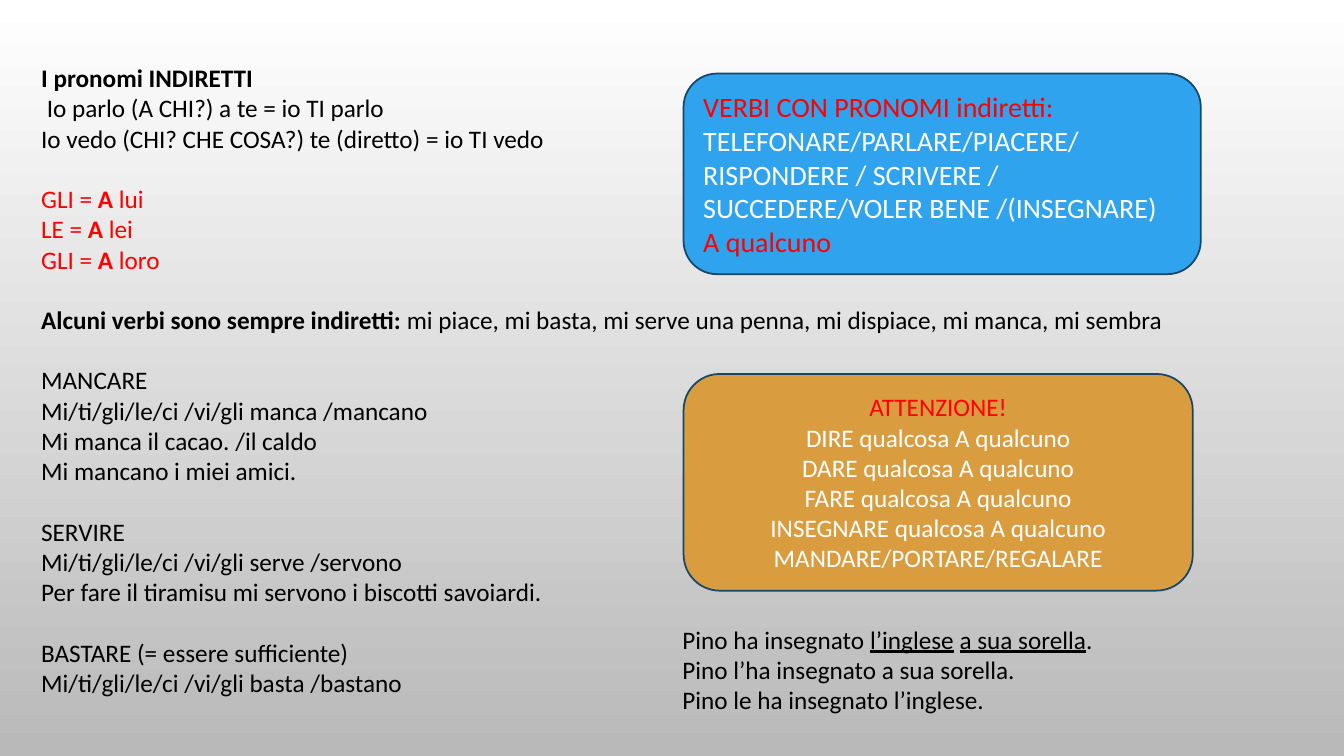
from pptx import Presentation
from pptx import util as u
from pptx.dml.color import RGBColor
from pptx.enum import shapes, text

BLACK = RGBColor(0x00, 0x00, 0x00)
WHITE = RGBColor(0xFF, 0xFF, 0xFF)
GREY = RGBColor(0xB9, 0xB9, 0xB9)
RED = RGBColor(0xFF, 0x00, 0x00)
BLUE = RGBColor(0x2F, 0xA3, 0xEE)
OCHRE = RGBColor(0xD9, 0x9C, 0x3F)
NAVY = RGBColor(0x15, 0x47, 0x68)

WIDTH, HEIGHT = 13.33, 7.5
RIGHT_COLUMN = 6.78
SECTION_GAP = 21.6

INDIRECT = [("GLI", "lui"), ("LE", "lei"), ("GLI", "loro")]
SECTIONS = [
    [
        [("I pronomi INDIRETTI", {"bold": True})],
        [(" Io parlo (A CHI?) a te = io TI parlo", {})],
        [("Io vedo (CHI? CHE COSA?) te (diretto) = io TI vedo", {})],
    ],
    [
        [(f"{pronoun} = ", {"color": RED}), ("A", {"color": RED, "bold": True}),
         (f" {person}", {"color": RED})]
        for pronoun, person in INDIRECT
    ],
    [
        [("Alcuni verbi sono sempre indiretti:", {"bold": True}),
         (" mi piace, mi basta, mi serve una penna, mi dispiace, mi manca, mi sembra", {})],
    ],
    [
        [("MANCARE", {})],
        [("Mi/ti/gli/le/ci /vi/gli manca /mancano", {})],
        [("Mi manca il cacao. /il caldo", {})],
        [("Mi mancano i miei amici.", {})],
    ],
    [
        [("SERVIRE", {})],
        [("Mi/ti/gli/le/ci /vi/gli serve /servono", {})],
        [("Per fare il tiramisu mi servono i biscotti savoiardi.", {})],
    ],
    [
        [("BASTARE (= essere sufficiente)", {})],
        [("Mi/ti/gli/le/ci /vi/gli basta /bastano", {})],
    ],
]
VERBS = [[
    [("VERBI CON PRONOMI indiretti:", {"color": RED})],
    [("TELEFONARE/PARLARE/PIACERE/ RISPONDERE / SCRIVERE / "
      "SUCCEDERE/VOLER BENE /(INSEGNARE)", {})],
    [("A qualcuno", {"color": RED})],
]]
WARNING = [[
    [("ATTENZIONE!", {"color": RED})],
    *[[(f"{verb} qualcosa A qualcuno", {})] for verb in ("DIRE", "DARE", "FARE", "INSEGNARE")],
    [("MANDARE/PORTARE/REGALARE", {})],
]]
EXAMPLES = [[
    [("Pino ha insegnato ", {}), ("l’inglese", {"underline": True}), (" ", {}),
     ("a sua sorella", {"underline": True}), (".", {})],
    [("Pino l’ha insegnato a sua sorella.", {})],
    [("Pino le ha insegnato l’inglese.", {})],
]]

TEXT_BOXES = [
    (SECTIONS, (0.31, 0.57, 12, 6.77)),
    (EXAMPLES, (6.67, 6.14, 4.65, 1.01)),
]
CARDS = [
    (VERBS, (RIGHT_COLUMN, 0.73, 5.13, 1.99), BLUE, 20, text.PP_ALIGN.LEFT),
    (WARNING, (RIGHT_COLUMN, 3.71, 5.05, 2.15), OCHRE, 18, text.PP_ALIGN.CENTER),
]


def write(frame, sections, size=18, color=BLACK, align=text.PP_ALIGN.LEFT,
          anchor=text.MSO_ANCHOR.TOP):
    frame.word_wrap = True
    frame.vertical_anchor = anchor
    paragraph = None
    for section in sections:
        for index, runs in enumerate(section):
            starts_section = index == 0 and paragraph is not None
            paragraph = frame.paragraphs[0] if paragraph is None else frame.add_paragraph()
            paragraph.alignment = align
            if starts_section:
                paragraph.space_before = u.Pt(SECTION_GAP)
            for content, style in runs:
                run = paragraph.add_run()
                run.text = content
                run.font.name = "Calibri"
                run.font.size = u.Pt(size)
                run.font.bold = style.get("bold", False)
                run.font.underline = style.get("underline", False)
                run.font.color.rgb = style.get("color", color)


def main():
    presentation = Presentation()
    presentation.slide_width = u.Inches(WIDTH)
    presentation.slide_height = u.Inches(HEIGHT)
    slide = presentation.slides.add_slide(presentation.slide_layouts[6])

    background = slide.background.fill
    background.gradient()
    background.gradient_angle = 270
    for stop, color in zip(background.gradient_stops, (WHITE, GREY)):
        stop.color.rgb = color

    for sections, place in TEXT_BOXES:
        box = slide.shapes.add_textbox(*map(u.Inches, place))
        write(box.text_frame, sections)

    for sections, place, fill, size, align in CARDS:
        card = slide.shapes.add_shape(shapes.MSO_SHAPE.ROUNDED_RECTANGLE, *map(u.Inches, place))
        card.shadow.inherit = False
        card.fill.solid()
        card.fill.fore_color.rgb = fill
        card.line.color.rgb = NAVY
        card.line.width = u.Pt(1.25)
        write(card.text_frame, sections, size=size, color=WHITE, align=align,
              anchor=text.MSO_ANCHOR.MIDDLE)

    presentation.save("out.pptx")


if __name__ == "__main__":
    main()
